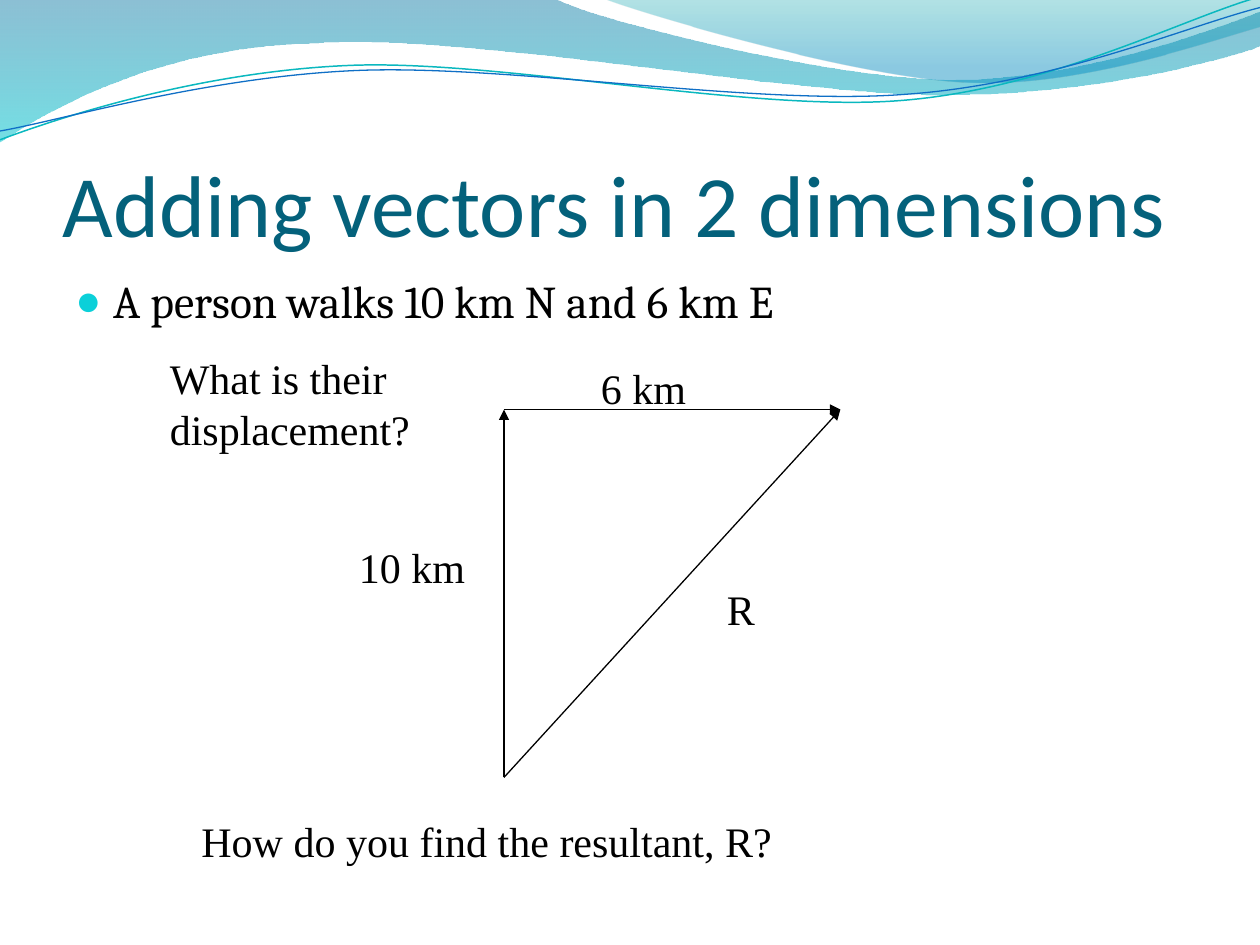
from lxml.etree import SubElement
from pptx import Presentation
from pptx.dml.color import RGBColor
from pptx.enum.shapes import MSO_CONNECTOR
from pptx.enum.text import MSO_ANCHOR
from pptx.oxml.ns import qn
from pptx.util import Inches, Pt

BLACK = "000000"
SERIF = "Times New Roman"

UPPER_WAVE = [
    (0, 0), (4.4, -0.01),
    (4.76, 0.17, 6.64, 0.63, 7.58, 0.63), (8.53, 0.63, 9.58, 0.26, 10, 0.09),
    (10.01, 0.36),
    (9.83, 0.44, 8.7, 0.76, 7.46, 0.75), (6.22, 0.75, 3.82, 0.28, 2.57, 0.34),
    (1.29, 0.36, 0.46, 0.83, -0.01, 1.13),
]
RIGHT_WAVE = [
    (4.79, -0.01),
    (5.09, 0.11, 6.82, 0.62, 7.69, 0.65), (8.56, 0.69, 9.61, 0.32, 10, 0.21),
    (10, 0),
]
TEAL_CURVE = [
    (0, 1.11),
    (0.48, 0.93, 1.58, 0.57, 2.77, 0.52), (3.95, 0.47, 5.93, 0.89, 7.13, 0.8),
    (8.33, 0.71, 9.38, 0.15, 9.98, -0.02),
]
BLUE_CURVE = [
    (0, 1.04),
    (0.47, 0.96, 1.64, 0.61, 2.83, 0.56), (4.03, 0.51, 5.97, 0.84, 7.17, 0.75),
    (8.36, 0.67, 9.41, 0.21, 10, 0.06),
]


def color(value):
    return RGBColor.from_string(value)


def bend_segment(line, segment, left, top):
    line.tag = qn("a:cubicBezTo")
    line.remove(line[0])
    for x, y in zip(segment[0::2], segment[1::2]):
        SubElement(line, qn("a:pt"), x=str(Inches(x) - left), y=str(Inches(y) - top))


def add_outline(slide, segments, close):
    corners = [(Inches(segment[-2]), Inches(segment[-1])) for segment in segments]
    builder = slide.shapes.build_freeform(*corners[0])
    builder.add_line_segments(corners[1:], close=close)
    shape = builder.convert_to_shape()
    shape.shadow.inherit = False
    lines = list(shape._element.spPr.iter(qn("a:lnTo")))
    for line, segment in zip(lines, segments[1:]):
        if len(segment) == 6:
            bend_segment(line, segment, shape.left, shape.top)
    return shape


def add_wave(slide, segments, stops):
    shape = add_outline(slide, segments, True)
    shape.line.fill.background()
    shape.fill.gradient()
    shape.fill.gradient_angle = 270
    for gradient_stop, (position, value, opacity) in zip(shape.fill.gradient_stops, stops):
        gradient_stop.position = position
        gradient_stop.color.rgb = color(value)
    for element, stop in zip(shape._element.spPr.iter(qn("a:srgbClr")), stops):
        SubElement(element, qn("a:alpha"), val=str(stop[2] * 1000))


def add_curve(slide, segments, value, width):
    shape = add_outline(slide, segments, False)
    shape.fill.background()
    shape.line.color.rgb = color(value)
    shape.line.width = Pt(width)


def add_text(slide, text, left, top, width, height,
             size=24, font=SERIF, value=BLACK):
    box = slide.shapes.add_textbox(Inches(left), Inches(top), Inches(width), Inches(height))
    frame = box.text_frame
    frame.word_wrap = True
    frame.text = text
    run_font = frame.paragraphs[0].runs[0].font
    run_font.size = Pt(size)
    run_font.name = font
    run_font.color.rgb = color(value)
    return frame


def add_title(slide, text):
    frame = add_text(slide, text, 0.5, 0.77, 9, 1.25, 50, "Calibri", "04617B")
    frame.vertical_anchor = MSO_ANCHOR.BOTTOM
    frame.margin_left = frame.margin_right = frame.margin_bottom = 0


def add_bullet(slide, text):
    frame = add_text(slide, text, 0.5, 2.12, 9, 4.8, 26, "Cambria")
    properties = frame.paragraphs[0]._p.get_or_add_pPr()
    properties.set("marL", str(Inches(0.3)))
    properties.set("indent", str(-Inches(0.3)))
    bullet_color = SubElement(properties, qn("a:buClr"))
    SubElement(bullet_color, qn("a:srgbClr"), val="0BD0D9")
    SubElement(properties, qn("a:buSzPct"), val="95000")
    SubElement(properties, qn("a:buFont"), typeface=SERIF)
    SubElement(properties, qn("a:buChar"), char="●")


def add_vector(slide, start, end):
    connector = slide.shapes.add_connector(
        MSO_CONNECTOR.STRAIGHT, *(Inches(length) for length in start + end))
    connector.line.color.rgb = color(BLACK)
    connector.line.width = Pt(0.75)
    SubElement(connector.line._get_or_add_ln(), qn("a:tailEnd"), type="triangle")
    SubElement(connector._element.spPr, qn("a:effectLst"))


def main():
    presentation = Presentation()
    presentation.slide_width = Inches(10)
    presentation.slide_height = Inches(7.5)
    slide = presentation.slides.add_slide(presentation.slide_layouts[6])

    add_wave(slide, UPPER_WAVE, [(0, "0074A1", 45), (1, "00C6CF", 55)])
    add_wave(slide, RIGHT_WAVE, [(0, "00A1A9", 30), (0.8, "008BBF", 45)])
    add_curve(slide, TEAL_CURVE, "0AB8BF", 0.85)
    add_curve(slide, BLUE_CURVE, "0F6FC6", 0.75)

    add_title(slide, "Adding vectors in 2 dimensions")
    add_bullet(slide, "A person walks 10 km N and 6 km E")
    add_text(slide, "What is their displacement?", 1.25, 2.75, 3.5, 0.9)

    origin, corner, destination = (4, 6.17), (4, 3.25), (6.67, 3.25)
    add_vector(slide, origin, corner)
    add_vector(slide, corner, destination)
    add_vector(slide, origin, destination)

    add_text(slide, "10 km", 2.75, 4.25, 1.17, 0.5)
    add_text(slide, "6 km", 4.67, 2.83, 1, 0.5)
    add_text(slide, "R", 5.67, 4.58, 0.5, 0.5)
    add_text(slide, "How do you find the resultant, R?", 1.5, 6.42, 7.58, 0.5)

    presentation.save("out.pptx")


if __name__ == "__main__":
    main()
